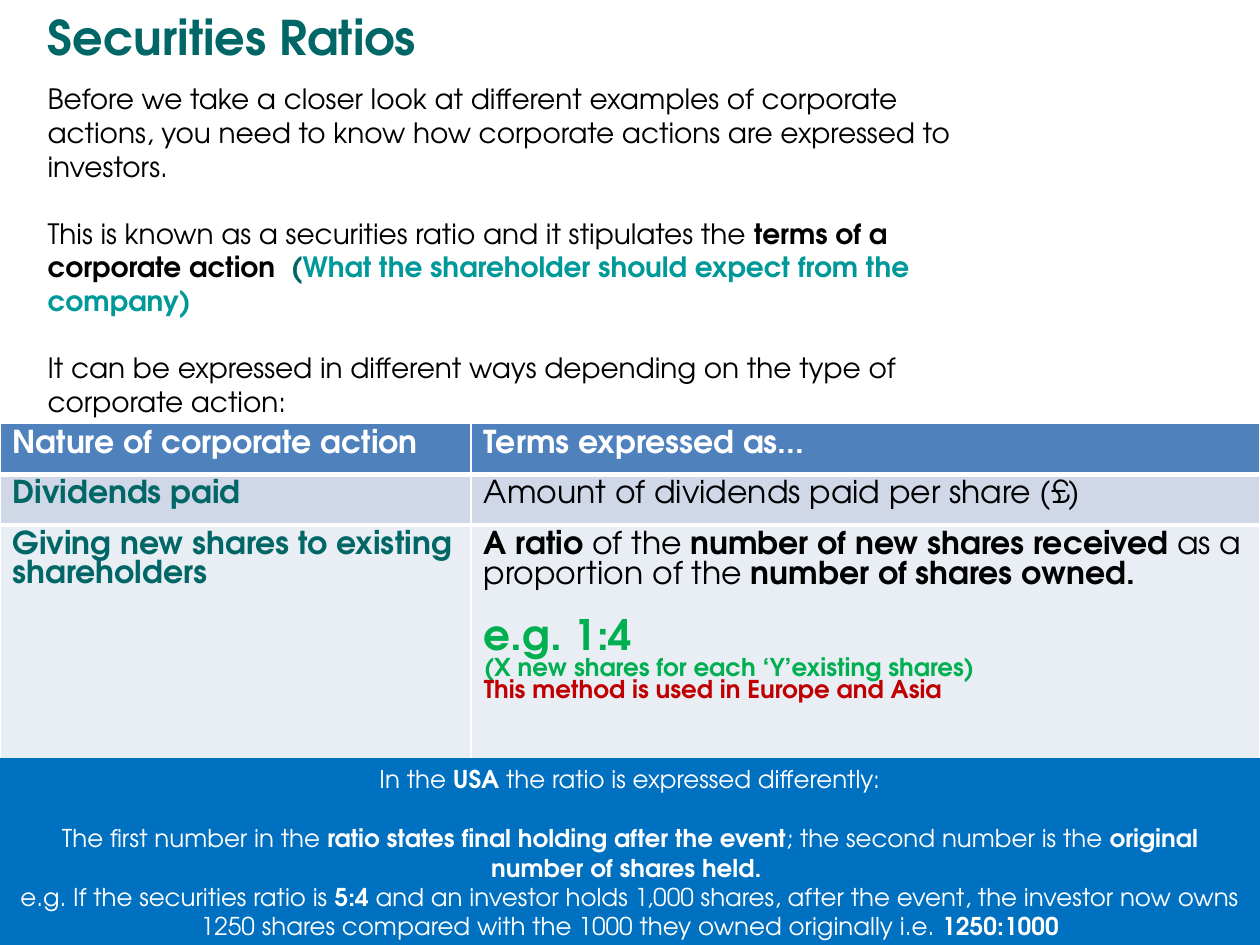
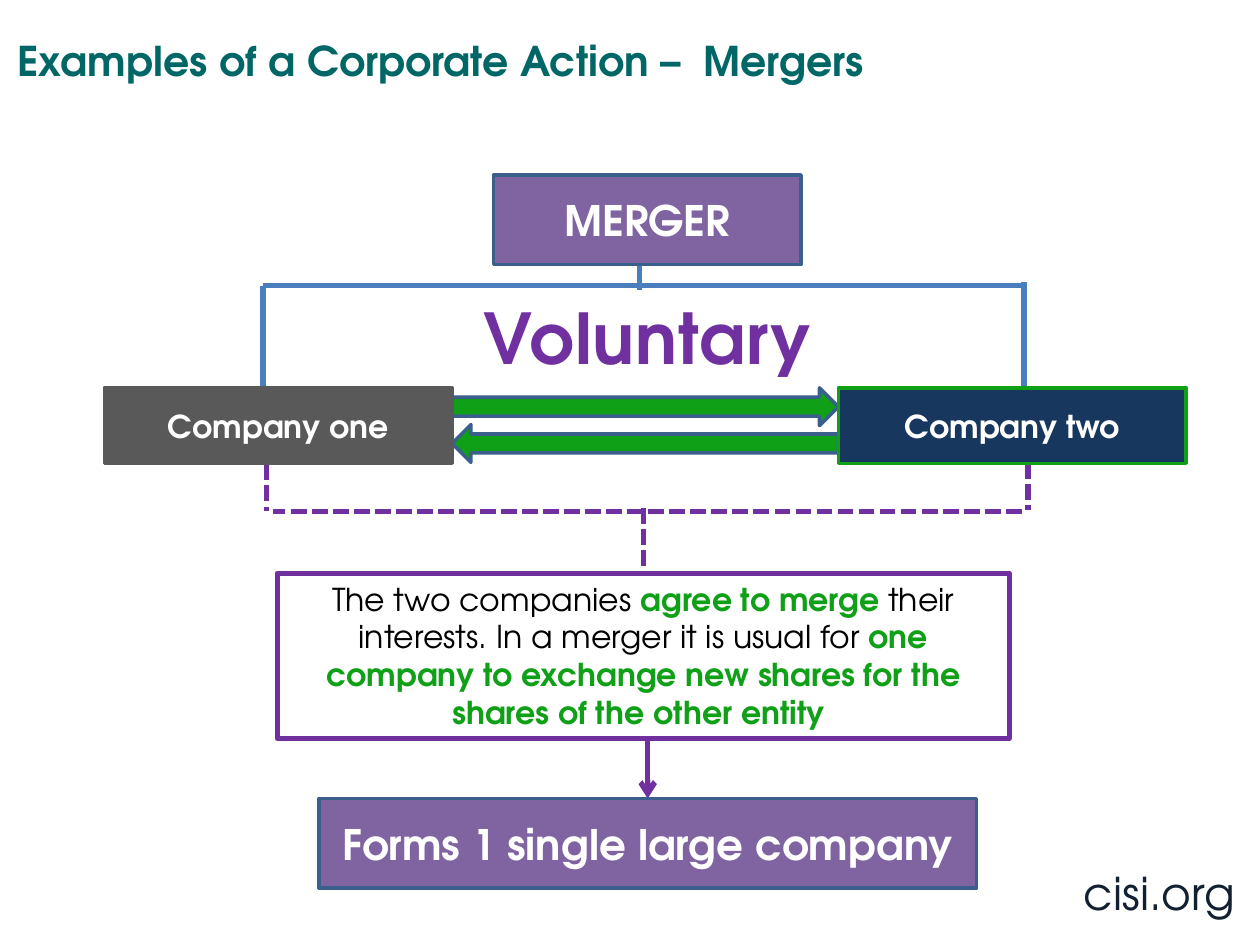
from lxml import etree
from pptx import Presentation
from pptx.dml.color import RGBColor
from pptx.enum.dml import MSO_LINE
from pptx.enum.shapes import MSO_CONNECTOR, MSO_SHAPE
from pptx.enum.text import MSO_ANCHOR, MSO_AUTO_SIZE, PP_ALIGN
from pptx.oxml.ns import qn
from pptx.util import Pt

LEFT, CENTER = PP_ALIGN.LEFT, PP_ALIGN.CENTER
TOP, MIDDLE = MSO_ANCHOR.TOP, MSO_ANCHOR.MIDDLE
RECT, ARROW = MSO_SHAPE.RECTANGLE, MSO_SHAPE.RIGHT_ARROW
STRAIGHT, DASH = MSO_CONNECTOR.STRAIGHT, MSO_LINE.SQUARE_DOT
FIT_OFF = MSO_AUTO_SIZE.NONE

FONT = "TeX Gyre Adventor"
HEX = {
    "white": "FFFFFF", "black": "000000", "teal": "006666", "aqua": "009999",
    "head": "4F81BD", "odd": "D0D8E8", "even": "E9EDF4", "blue": "0070C0",
    "lime": "00B050", "red": "C00000", "green": "10A017", "plum": "8064A2",
    "violet": "7030A0", "edge": "3A5F8C", "link": "4B7EBC", "gray": "595959",
    "navy": "17375E", "ink": "122031",
}


def rgb(name):
    """Return a named colour."""
    return RGBColor.from_string(HEX[name])


def pts(*nums):
    """Turn numbers into point lengths."""
    return [Pt(num) for num in nums]


def write(frame, paras, size=18, color="black", bold=False, align=LEFT,
          anchor=TOP, gap=0, lead=None, wrap=True, track=0):
    """Fill a frame with paragraphs, each a list of strings or (text, format) runs."""
    frame.word_wrap = wrap
    frame.vertical_anchor = anchor
    for i, runs in enumerate(paras):
        para = frame.paragraphs[0] if i == 0 else frame.add_paragraph()
        para.alignment = align
        para.space_before = Pt(gap if i else 0)
        if lead:
            para.line_spacing = lead
        for item in runs:
            text, form = (item, {}) if isinstance(item, str) else item
            run = para.add_run()
            run.text = text
            font = run.font
            font.name = FONT
            font.size = Pt(form.get("size", size))
            font.bold = form.get("bold", bold)
            font.color.rgb = rgb(form.get("color", color))
            if track:
                run._r.get_or_add_rPr().set("spc", str(track))


def strong(text, color="black"):
    """Make a bold run."""
    return text, {"bold": True, "color": color}


def place(shape, box):
    """Move a shape to a box."""
    shape.left, shape.top, shape.width, shape.height = pts(*box)


def head(slide, text, box, size, lead=None):
    """Format the slide title."""
    title = slide.shapes.title
    place(title, box)
    title.text_frame.auto_size = FIT_OFF
    write(title.text_frame, [[text]], size=size, color="teal", bold=True,
          anchor=MIDDLE, lead=lead)


def block(slide, box, fill=None, edge=None, width=2, kind=RECT):
    """Draw a flat preset shape."""
    shape = slide.shapes.add_shape(kind, *pts(*box))
    shape.shadow.inherit = False
    if fill:
        shape.fill.solid()
        shape.fill.fore_color.rgb = rgb(fill)
    else:
        shape.fill.background()
    if edge:
        shape.line.color.rgb = rgb(edge)
        shape.line.width = Pt(width)
    else:
        shape.line.fill.background()
    return shape


def label(slide, text, box, fill, edge, size=24):
    """Draw a box with a bold white label."""
    shape = block(slide, box, fill, edge)
    write(shape.text_frame, [[text]], size=size, color="white", bold=True,
          align=CENTER, anchor=MIDDLE)
    return shape


def note(slide, text, box, **form):
    """Add a free line of text."""
    frame = slide.shapes.add_textbox(*pts(*box)).text_frame
    write(frame, [[text]], **form)


def join(shapes, ends, color, dash=False, tip=False):
    """Draw a straight 3 point line."""
    line = shapes.add_connector(STRAIGHT, *pts(*ends))
    line.line.color.rgb = rgb(color)
    line.line.width = Pt(3)
    if dash:
        line.line.dash_style = DASH
    props = line.element.spPr
    if tip:
        etree.SubElement(props.find(qn("a:ln")), qn("a:tailEnd"), type="arrow")
    etree.SubElement(props, qn("a:effectLst"))
    return line


def rule(cell, side, width):
    """Draw a white border on one side of a cell."""
    line = etree.Element(qn("a:" + side), w=str(Pt(width)))
    fill = etree.SubElement(line, qn("a:solidFill"))
    etree.SubElement(fill, qn("a:srgbClr"), val=HEX["white"])
    cell._tc.get_or_add_tcPr().insert(0, line)


def intro(slide, box):
    """Set the opening text in the body placeholder."""
    body = slide.placeholders[1]
    place(body, box)
    frame = body.text_frame
    frame.auto_size = FIT_OFF
    frame.margin_right = Pt(34)
    write(frame, [
        ["Before we take a closer look at different examples of corporate "
         "actions, you need to know how corporate actions are expressed to "
         "investors."],
        ["This is known as a securities ratio and it stipulates the ",
         strong("terms of a corporate action  "), strong("(", "teal"),
         strong("What the shareholder should expect from the company)", "aqua")],
        ["It can be expressed in different ways depending on the type of "
         "corporate action:"],
    ], size=16, gap=19.2)
    for para in frame.paragraphs:
        props = para._p.get_or_add_pPr()
        props.set("marL", "0")
        props.set("indent", "0")
        etree.SubElement(props, qn("a:buNone"))


def grid(slide, box):
    """Build the table of actions and terms."""
    rows = [
        ([["Nature of corporate action"]], [["Terms expressed as..."]]),
        ([["Dividends paid"]], [["Amount of dividends paid per share (£)"]]),
        ([["Giving new shares to existing shareholders"]],
         [[strong("A ratio "), "of the ", strong("number of new shares received"),
           " as a proportion of the ", strong("number of shares owned.")],
          [("e.g. 1:4", {"size": 24, "bold": True, "color": "lime"})],
          [("(X new shares for each ‘Y’existing shares)",
            {"size": 14, "bold": True, "color": "lime"})],
          [("This method is used in Europe and Asia",
            {"size": 14, "bold": True, "color": "red"})]]),
    ]
    table = slide.shapes.add_table(len(rows), 2, *pts(*box)).table
    for col, part in zip(table.columns, (0.374, 0.626)):
        col.width = Pt(box[2] * part)
    low = 29
    highs = (low, low, box[3] - 2 * low)
    fills = ("head", "odd", "even")
    for i, (row, high, fill) in enumerate(zip(rows, highs, fills)):
        table.rows[i].height = Pt(high)
        for j, paras in enumerate(row):
            cell = table.cell(i, j)
            cell.fill.solid()
            cell.fill.fore_color.rgb = rgb(fill)
            tint = "white" if i == 0 else ("teal", "black")[j]
            write(cell.text_frame, paras, color=tint, bold=i == 0 or j == 0)
            if i == 0:
                rule(cell, "lnB", 3)
            elif i == 1:
                rule(cell, "lnT", 3)
    table.cell(2, 1).text_frame.paragraphs[1].space_before = Pt(16.7)


def band(slide, box):
    """Draw the blue band on the other ratio style."""
    shape = block(slide, box, "blue")
    frame = shape.text_frame
    write(frame, [
        ["In the ", strong("USA", "white"), " the ratio is expressed differently:"],
        ["The first number in the ",
         strong("ratio states final holding after the event", "white"),
         "; the second number is the ",
         strong("original number of shares held. ", "white")],
        ["e.g. If the securities ratio is ", strong("5:4", "white"),
         " and an investor holds 1,000 shares, after the event, the investor now "
         "owns 1250 shares compared with the 1000 they owned originally i.e. ",
         strong("1250:1000", "white")],
    ], size=14, color="white", align=CENTER)
    frame.paragraphs[1].space_before = Pt(16.8)


def links(slide, x, y, paths, color, dash=False):
    """Draw a group of lines from a corner."""
    group = slide.shapes.add_group_shape()
    for x1, y1, x2, y2 in paths:
        join(group.shapes, (x + x1, y + y1, x + x2, y + y2), color, dash)


def tree(slide, box):
    """Draw the merger box, both companies and their links."""
    x, y, wide, high = box
    side, tall = 198.7, 43.2
    firm = y + high - tall
    span = wide - 2 * side
    label(slide, "MERGER", (x + 222.5, y, 175.7, 51.1), "plum", "edge")
    links(slide, x, y, [(306, 51.8, 306, 65.5), (90.7, 63.3, 525, 63.3),
                        (90.7, 63.3, 90.7, 121), (525.6, 61.2, 525.6, 121)], "link")
    links(slide, x, y, [(92.9, 153.4, 92.9, 192.2), (524.2, 192.2, 96.5, 192.2),
                        (527.8, 152.6, 527.8, 191.5)], "violet", True)
    note(slide, "Voluntary", (x + 207.3, y + 64.8, 206.6, 55.4), size=40,
         color="violet", bold=True, align=CENTER, wrap=False, track=50)
    for i in range(2):
        arrow = block(slide, (x + side, firm + i * 21, span, tall / 2),
                      "green", "edge", kind=ARROW)
        arrow.rotation = 180 * i
    firms = (("Company one", "gray", "gray"), ("Company two", "navy", "green"))
    for i, (name, fill, edge) in enumerate(firms):
        label(slide, name, (x + i * (side + span), firm, side, tall),
              fill, edge, 18)


def result(slide, box):
    """Draw the agreement and the company that it forms."""
    x, y, wide, high = box
    info = block(slide, (x, y, wide, 94.3), edge="violet", width=3)
    write(info.text_frame, [[
        "The two companies ", strong("agree to merge ", "green"),
        "their interests. In a merger it is usual for ",
        strong("one company to exchange new shares for the shares of the "
               "other entity ", "green")]], align=CENTER)
    form = label(slide, "Forms 1 single large company",
                 (x + 23.8, y + high - 51.1, 375.8, 51.1), "plum", "edge")
    mid = x + wide / 2
    stem = join(slide.shapes, (mid, y - 37.4, mid, y), "violet", dash=True)
    stem.end_connect(info, 0)
    goal = x + 211.7
    down = join(slide.shapes, (goal, y + 94.3, goal, y + high - 51.1),
                "violet", tip=True)
    down.end_connect(form, 0)


def ratios(deck):
    """Build the slide on securities ratios."""
    slide = deck.slides.add_slide(deck.slide_layouts[1])
    head(slide, "Securities Ratios", (20.2, 3.6, 595.4, 38.9), 27.3, 0.9)
    intro(slide, (20, 43.2, 572.4, 200.9))
    grid(slide, (0, 242, 720, 191.4))
    band(slide, (0, 433.2, 720, 108.7))


def merger(deck):
    """Build the slide on mergers."""
    slide = deck.slides.add_slide(deck.slide_layouts[5])
    head(slide, "Examples of a Corporate Action –  Mergers",
         (2.9, 15.1, 595.4, 38.9), 23.4)
    tree(slide, (59.6, 100, 618.2, 164.8))
    result(slide, (158.4, 327.6, 418.3, 179.8))
    note(slide, "cisi.org", (612.3, 491, 108, 38.9), size=26, color="ink")


def main():
    """Build and save the deck."""
    deck = Presentation()
    deck.slide_width, deck.slide_height = pts(720, 540)
    ratios(deck)
    merger(deck)
    deck.save("out.pptx")


if __name__ == "__main__":
    main()
